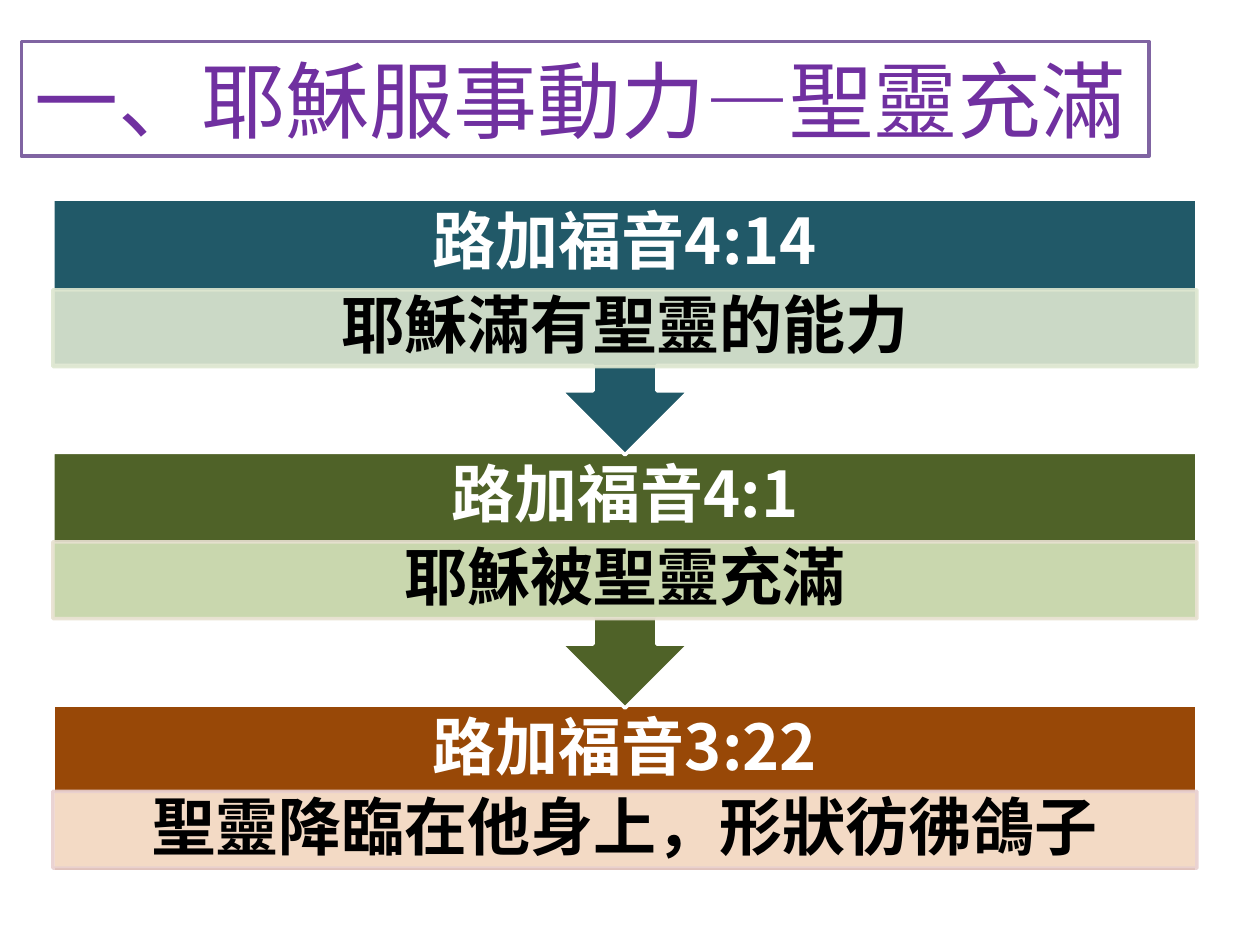
"""Builds a title slide with three scripture steps linked by downward arrows."""
from lxml import etree
from pptx import Presentation
from pptx import util as u
from pptx.dml.color import RGBColor
from pptx.enum import shapes, text
from pptx.oxml.ns import qn

WHITE = RGBColor(0xFF, 0xFF, 0xFF)
BLACK = RGBColor(0x00, 0x00, 0x00)
PURPLE = RGBColor(0x70, 0x30, 0xA0)
VIOLET = RGBColor(0x80, 0x64, 0xA2)
TEAL = RGBColor(0x21, 0x59, 0x68)
OLIVE = RGBColor(0x4F, 0x62, 0x28)
BROWN = RGBColor(0x98, 0x48, 0x07)
SAGE = RGBColor(0xDE, 0xE7, 0xD1)
LIME = RGBColor(0xD7, 0xE4, 0xBD)
SAND = RGBColor(0xE8, 0xE1, 0xD1)
PEACH = RGBColor(0xFD, 0xEA, 0xDA)
ROSE = RGBColor(0xE8, 0xD0, 0xD0)

WIDTH, HEIGHT = 10, 7.5
LEFT, SPAN = 0.42, 9.08
TOP, PITCH = 1.58, 2.01
HEADING_HEIGHT, VERSE_HEIGHT = 0.71, 0.61
STEPS = [
    ("路加福音4:14", "耶穌滿有聖靈的能力", TEAL, SAGE, SAGE, 0.72),
    ("路加福音4:1", "耶穌被聖靈充滿", OLIVE, LIME, SAND, 0.71),
    ("路加福音3:22", "聖靈降臨在他身上，形狀彷彿鴿子", BROWN, PEACH, ROSE, 0.68),
]


class StepSlide:
    """Holds the body style and the slide being built."""

    font = "Noto Sans CJK SC"
    size = u.Pt(36)
    line_width = u.Pt(2)

    def __init__(self, deck):
        self.slide = deck.slides.add_slide(deck.slide_layouts[5])

    def paint(self, shape, fill, line, opacity=100):
        """Fills and outlines a shape, both at the same opacity."""
        shape.fill.solid()
        shape.fill.fore_color.rgb = fill
        shape.line.color.rgb = line
        shape.line.width = self.line_width
        if opacity < 100:
            for color in shape._element.spPr.iter(qn("a:srgbClr")):
                etree.SubElement(color, qn("a:alpha"), val=str(opacity * 1000))

    def title(self, wording, left, top, width, height):
        """Formats the title placeholder as an outlined box."""
        box = self.slide.shapes.title
        box.left, box.top = u.Inches(left), u.Inches(top)
        box.width, box.height = u.Inches(width), u.Inches(height)
        self.paint(box, WHITE, VIOLET)
        frame = box.text_frame
        frame.text = wording
        frame.word_wrap = False
        frame.auto_size = text.MSO_AUTO_SIZE.SHAPE_TO_FIT_TEXT
        frame.vertical_anchor = text.MSO_ANCHOR.MIDDLE
        para = frame.paragraphs[0]
        para.alignment = text.PP_ALIGN.LEFT
        para.font.name, para.font.size = "Arial", u.Pt(48)
        para.font.color.rgb = PURPLE

    def block(self, kind, top, height, fill, line, opacity=100):
        """Adds a full-width shape."""
        shape = self.slide.shapes.add_shape(
            kind, u.Inches(LEFT), u.Inches(top), u.Inches(SPAN), u.Inches(height))
        shape.shadow.inherit = False
        self.paint(shape, fill, line, opacity)
        return shape

    def label(self, wording, top, height, color):
        """Adds a full-width line of bold centred text."""
        box = self.slide.shapes.add_textbox(
            u.Inches(LEFT), u.Inches(top), u.Inches(SPAN), u.Inches(height))
        frame = box.text_frame
        frame.text = wording
        frame.word_wrap = True
        frame.vertical_anchor = text.MSO_ANCHOR.MIDDLE
        frame.margin_left = frame.margin_right = u.Inches(0.28)
        frame.margin_top = frame.margin_bottom = 0
        para = frame.paragraphs[0]
        para.alignment = text.PP_ALIGN.CENTER
        para.line_spacing = 0.9
        para.font.name, para.font.size, para.font.bold = self.font, self.size, True
        para.font.color.rgb = color

    def step(self, top, heading, verse, dark, pale, edge, offset, last):
        """Adds a heading with its verse, and an arrow unless it is the last."""
        kind = shapes.MSO_SHAPE
        if last:
            self.block(kind.RECTANGLE, top, 1.32, dark, WHITE)
        else:
            callout = self.block(kind.UP_ARROW_CALLOUT, top, 2.03, dark, WHITE)
            callout.rotation = 180
        self.label(heading, top, HEADING_HEIGHT, WHITE)
        self.block(kind.RECTANGLE, top + offset, VERSE_HEIGHT, pale, edge, 90)
        self.label(verse, top + offset, VERSE_HEIGHT, BLACK)


def main():
    """Builds and saves the deck."""
    deck = Presentation()
    deck.slide_width, deck.slide_height = u.Inches(WIDTH), u.Inches(HEIGHT)
    page = StepSlide(deck)
    page.title("一、耶穌服事動力—聖靈充滿", 0.17, 0.33, 8.95, 0.91)
    for index, step in reversed(list(enumerate(STEPS))):
        page.step(TOP + index * PITCH, *step, last=index == len(STEPS) - 1)
    deck.save("out.pptx")


if __name__ == "__main__":
    main()
